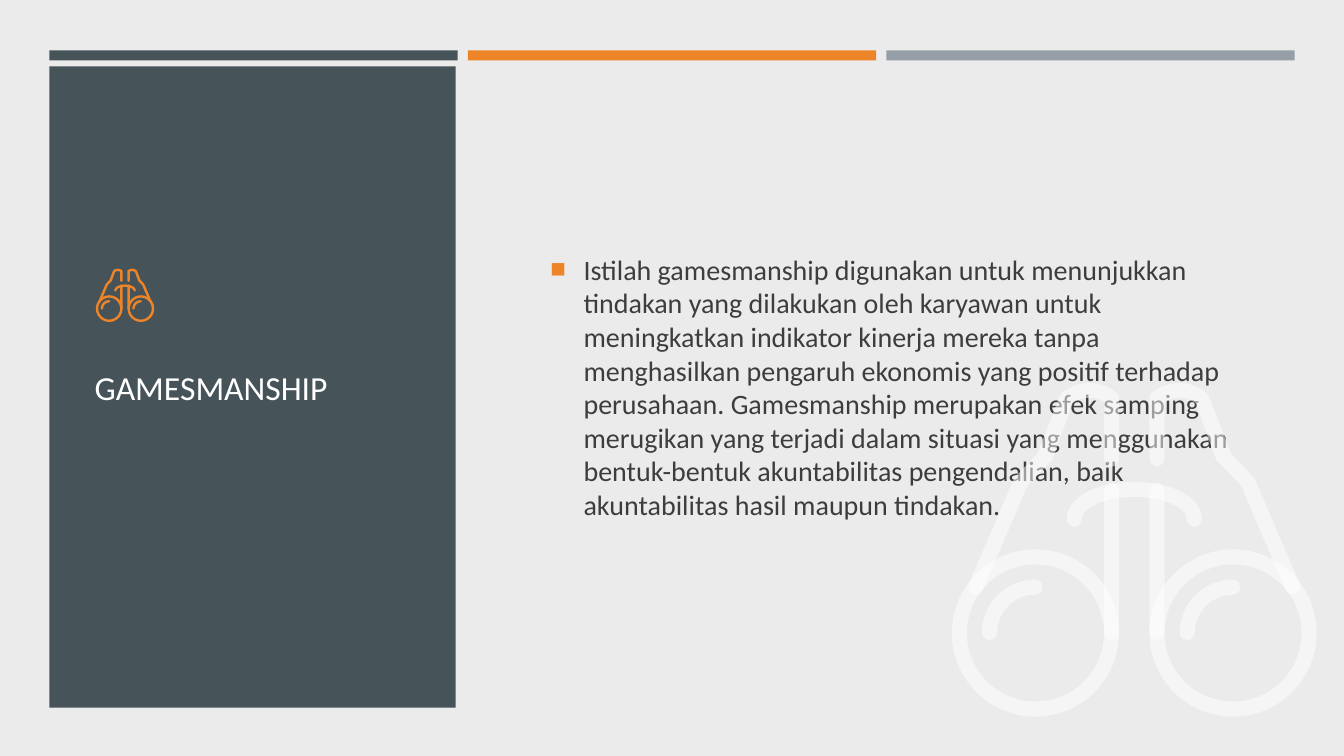
from lxml import etree
from pptx import Presentation
from pptx.dml.color import RGBColor
from pptx.enum.shapes import MSO_SHAPE
from pptx.enum.text import MSO_ANCHOR
from pptx.oxml.ns import qn
from pptx.util import Inches, Pt

RECT, RING, ROD = MSO_SHAPE.RECTANGLE, MSO_SHAPE.DONUT, MSO_SHAPE.ROUNDED_RECTANGLE
MIDDLE = MSO_ANCHOR.MIDDLE

PAPER = RGBColor(0xEB, 0xEB, 0xEB)
SLATE = RGBColor(0x46, 0x53, 0x59)
ORANGE = RGBColor(0xED, 0x84, 0x28)
GREY = RGBColor(0x96, 0x9F, 0xA7)
INK = RGBColor(0x3D, 0x3D, 0x3D)
WHITE = RGBColor(0xFF, 0xFF, 0xFF)

FONT = "Calibri"
TITLE = "GAMESMANSHIP"
BODY = (
    "Istilah gamesmanship digunakan untuk menunjukkan tindakan yang dilakukan oleh "
    "karyawan untuk meningkatkan indikator kinerja mereka tanpa menghasilkan pengaruh "
    "ekonomis yang positif terhadap perusahaan. Gamesmanship merupakan efek samping "
    "merugikan yang terjadi dalam situasi yang menggunakan bentuk-bentuk akuntabilitas "
    "pengendalian, baik akuntabilitas hasil maupun tindakan."
)

# Binocular outlines, in inches from the top centre of the icon.
# A pair is a line to that point; three pairs are a Bézier curve.
TUBE = [
    (1.57, 2.13), ((1.55, 2.13), (1.51, 2.11), (1.5, 2.08)),
    (1.06, 1.05), (0.85, 0.83), (0.82, 0.81), (0.61, 0.23),
    ((0.52, 0.16), (0.39, 0.16), (0.3, 0.22)), (0.3, 0.78),
    ((0.3, 0.82), (0.26, 0.86), (0.22, 0.86)),
    ((0.19, 0.86), (0.15, 0.82), (0.15, 0.78)), (0.15, 0.18),
    ((0.15, 0.17), (0.15, 0.15), (0.17, 0.13)),
    ((0.24, 0.07), (0.34, 0.03), (0.45, 0.03)),
    ((0.55, 0.03), (0.65, 0.07), (0.72, 0.13)),
    (0.74, 0.16), (0.96, 0.73), (1.17, 0.95), (1.19, 0.97), (1.64, 2.02),
    ((1.66, 2.06), (1.64, 2.11), (1.6, 2.12)),
]
BRIDGE = [
    (0.6, 1.46), ((0.56, 1.46), (0.52, 1.42), (0.52, 1.38)),
    ((0.52, 1.27), (0.3, 1.16), (0, 1.16)),
    ((-0.3, 1.16), (-0.52, 1.27), (-0.52, 1.38)),
    ((-0.52, 1.42), (-0.56, 1.46), (-0.6, 1.46)),
    ((-0.63, 1.46), (-0.67, 1.42), (-0.67, 1.38)),
    ((-0.67, 1.17), (-0.39, 1.01), (0, 1.01)),
    ((0.39, 1.01), (0.67, 1.17), (0.67, 1.38)),
    ((0.67, 1.42), (0.63, 1.46), (0.6, 1.46)),
]
# The glare is measured from the top centre too, on the right lens.
GLARE = [
    (0.53, 2.58), ((0.49, 2.58), (0.45, 2.55), (0.45, 2.51)),
    ((0.45, 2.21), (0.69, 1.98), (0.98, 1.98)),
    ((1.02, 1.98), (1.05, 2.01), (1.05, 2.06)),
    ((1.05, 2.1), (1.02, 2.13), (0.98, 2.13)),
    ((0.77, 2.13), (0.6, 2.3), (0.6, 2.51)),
    ((0.6, 2.55), (0.57, 2.58), (0.53, 2.58)),
]
LENS_SIZE, LENS_TOP, LENS_GAP = 1.66, 1.68, 1.96
STROKE, ROD_TOP, ROD_HEIGHT = 0.15, 1.02, 1.56


def paint(shape, colour, opacity=100):
    shape.shadow.inherit = False
    shape.line.fill.background()
    shape.fill.solid()
    shape.fill.fore_color.rgb = colour
    if opacity < 100:
        tint = shape.fill._xPr.find(qn("a:solidFill"))[0]
        etree.SubElement(tint, qn("a:alpha"), val=str(opacity * 1000))


def add_block(slide, kind, left, top, width, height, colour, opacity=100):
    block = slide.shapes.add_shape(
        kind, Inches(left), Inches(top), Inches(width), Inches(height))
    paint(block, colour, opacity)
    return block


def add_outline(slide, start, steps):
    """Draw a closed outline; each step holds one point (line) or three (curve)."""
    builder = slide.shapes.build_freeform(*start)
    builder.add_line_segments([step[-1] for step in steps], close=True)
    shape = builder.convert_to_shape()
    lines = list(shape._element.iter(qn("a:lnTo")))
    for line, step in zip(lines, steps):
        if len(step) == 3:
            curve = etree.Element(qn("a:cubicBezTo"))
            for x, y in step:
                etree.SubElement(curve, qn("a:pt"),
                                 x=str(x - shape.left), y=str(y - shape.top))
            line.getparent().replace(line, curve)
    return shape


def add_binoculars(slide, centre, top, scale, colour, opacity=100):
    def outline(path, flip=1, shift=0):
        def place(point):
            x, y = point
            return Inches(centre + scale * (flip * x + shift)), Inches(top + scale * y)

        steps = [[place(step)] if len(step) == 2 else [place(point) for point in step]
                 for step in path[1:]]
        paint(add_outline(slide, place(path[0]), steps), colour, opacity)

    def part(kind, left, y, width, height, rounding):
        block = add_block(slide, kind, centre + scale * left, top + scale * y,
                          scale * width, scale * height, colour, opacity)
        block.adjustments[0] = rounding

    for side, shift in ((-1, -LENS_GAP), (1, 0)):
        part(RING, STROKE + shift, LENS_TOP, LENS_SIZE, LENS_SIZE, STROKE / LENS_SIZE)
        outline(TUBE, flip=side)
        rod_left = STROKE if side == 1 else -2 * STROKE
        part(ROD, rod_left, ROD_TOP, STROKE, ROD_HEIGHT, 0.5)
        outline(GLARE, shift=shift)
    outline(BRIDGE)


def add_text(slide, text, left, top, width, height, size, colour, margin_right=0.1):
    frame = slide.shapes.add_textbox(
        Inches(left), Inches(top), Inches(width), Inches(height)).text_frame
    frame.word_wrap = True
    frame.vertical_anchor = MIDDLE
    frame.margin_right = Inches(margin_right)
    paragraph = frame.paragraphs[0]
    paragraph.text = text
    paragraph.font.name = FONT
    paragraph.font.size = Pt(size)
    paragraph.font.color.rgb = colour
    return paragraph


def add_bullet(paragraph, indent):
    paragraph.space_before = Pt(4)
    paragraph.space_after = Pt(6)
    properties = paragraph._p.get_or_add_pPr()
    properties.set("marL", str(Inches(indent)))
    properties.set("indent", str(-Inches(indent)))
    marks = [etree.Element(qn("a:buClr")),
             etree.Element(qn("a:buSzPct"), val="92000"),
             etree.Element(qn("a:buFont"), typeface="Arial"),
             etree.Element(qn("a:buChar"), char="■")]
    etree.SubElement(marks[0], qn("a:srgbClr"), val=str(ORANGE))
    defaults = properties.find(qn("a:defRPr"))
    for mark in marks:
        defaults.addprevious(mark)


def main():
    deck = Presentation()
    deck.slide_width, deck.slide_height = Inches(13.33), Inches(7.5)
    slide = deck.slides.add_slide(deck.slide_layouts[6])
    slide.background.fill.solid()
    slide.background.fill.fore_color.rgb = PAPER

    # Top bars and title panel
    for column, colour in enumerate((SLATE, ORANGE, GREY)):
        add_block(slide, RECT, 0.49 + 4.15 * column, 0.5, 4.05, 0.1, colour)
    add_block(slide, RECT, 0.49, 0.66, 4.03, 6.36, SLATE)

    # Definition and title
    definition = add_text(slide, BODY, 5.36, 1.29, 7.27, 5.09, 20, INK, margin_right=0.3)
    add_bullet(definition, 0.33)
    add_text(slide, TITLE, 0.84, 2.9, 3.32, 1.88, 24, WHITE)

    # Large pale binoculars and small orange ones
    add_binoculars(slide, 11.25, 3.77, 1, WHITE, opacity=50)
    add_binoculars(slide, 1.24, 2.66, 0.16, ORANGE)

    deck.save("out.pptx")


if __name__ == "__main__":
    main()
